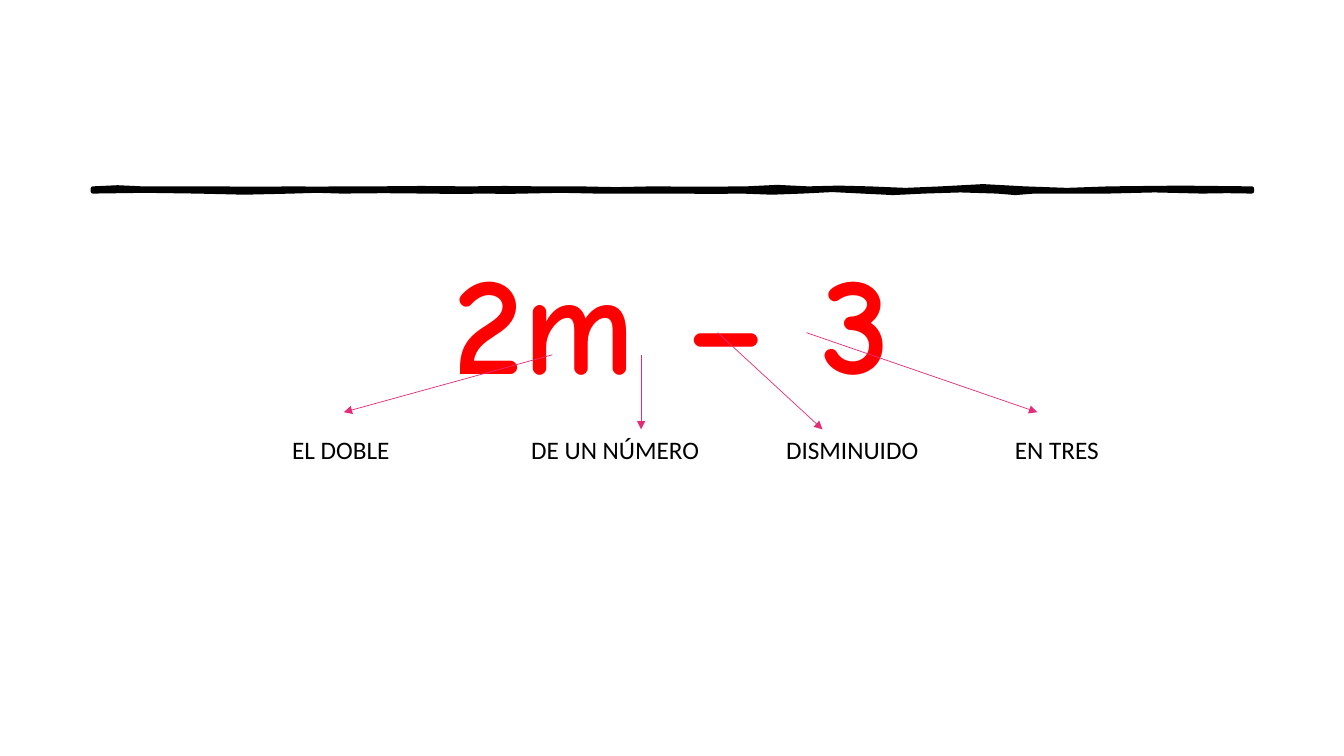
from lxml.etree import SubElement
from pptx import Presentation
from pptx.dml.color import RGBColor
from pptx.enum.shapes import MSO_CONNECTOR as Connector
from pptx.enum.text import MSO_AUTO_SIZE as AutoSize, PP_ALIGN as Align
from pptx.oxml.ns import qn
from pptx.util import Inches, Pt

BLACK = RGBColor(0x00, 0x00, 0x00)
RED = RGBColor(0xFF, 0x00, 0x00)
PINK = RGBColor(0xE3, 0x2D, 0x76)

RULE_LEFT, RULE_WIDTH = 6.9, 86.25
RULE_TOP, RULE_BOTTOM = 24.93, 25.33
SWAY = 0.05

TOP_WAVES = [
    (4.3, -3), (10.4, 0), (17.7, 1), (21, 1), (24.3, 0), (32.4, -1),
    (38.7, -1), (42, 0), (48.3, 2), (56.4, 1), (61.7, -4), (67, -2),
    (73.2, 4), (80.4, -6), (87.7, 4), (100, -2),
]
BOTTOM_WAVES = [
    (95.7, -1), (87.5, -3), (81.2, 0), (78, 4), (71.7, -3), (66.4, 4),
    (61.2, -4), (56, 3), (50.7, 1), (43.5, 0), (37.2, -2), (34, 1),
    (28.7, 1), (21.5, -1), (17.2, -2), (9, 3), (0, -2),
]
ARROWS = [
    (41.1, 46.93, 25.58, 54.53),
    (47.7, 46.93, 47.7, 56.8),
    (53.4, 44, 61.2, 56.8),
    (60, 44, 77.18, 54.53),
]
MEANINGS = [
    ("EL DOBLE", 21, 11.1),
    ("DE UN NÚMERO", 38.78, 17.18),
    ("DISMINUIDO", 57.75, 13.95),
    ("EN TRES", 74.78, 10.13),
]


def wavy_edge(waves, start, base):
    points = [(start, base)]
    for end, sway in waves:
        points += [((start + end) / 2, base + SWAY * sway), (end, base)]
        start = end
    return [(RULE_LEFT + RULE_WIDTH * along / 100, y) for along, y in points]


class ExpressionSlide:
    def __init__(self, deck):
        self.column = deck.slide_width / 100
        self.row = deck.slide_height / 100
        self.shapes = deck.slides.add_slide(deck.slide_layouts[6]).shapes

    def at(self, x, y):
        return round(x * self.column), round(y * self.row)

    def rule(self):
        edge = wavy_edge(TOP_WAVES, 0, RULE_TOP) + wavy_edge(BOTTOM_WAVES, 100, RULE_BOTTOM)
        start, *rest = [self.at(*point) for point in edge]
        builder = self.shapes.build_freeform(*start)
        builder.add_line_segments(rest, close=True)
        rule = builder.convert_to_shape()
        rule.shadow.inherit = False
        rule.fill.solid()
        rule.fill.fore_color.rgb = BLACK
        rule.line.color.rgb = BLACK
        rule.line.width = Pt(3)

    def text(self, words, x, y, width, height, font, size, color, bold=False):
        box = self.shapes.add_textbox(*self.at(x, y), *self.at(width, height))
        frame = box.text_frame
        frame.text = words
        frame.word_wrap = True
        paragraph = frame.paragraphs[0]
        style = paragraph.runs[0].font
        style.name, style.size, style.bold = font, Pt(size), bold
        style.color.rgb = color
        return frame, paragraph

    def expression(self, words):
        _, paragraph = self.text(words, RULE_LEFT, 28.13, RULE_WIDTH, 62,
                                 "Comic Neue", 100, RED, True)
        paragraph.alignment = Align.CENTER
        paragraph.line_spacing = 1.1
        paragraph.space_before = Pt(10)

    def meaning(self, words, x, width):
        frame, _ = self.text(words, x, 56.8, width, 5.33, "Calibri", 18, BLACK)
        frame.auto_size = AutoSize.SHAPE_TO_FIT_TEXT

    def arrow(self, x1, y1, x2, y2):
        arrow = self.shapes.add_connector(
            Connector.STRAIGHT, *self.at(x1, y1), *self.at(x2, y2))
        arrow.line.color.rgb = PINK
        arrow.line.width = Pt(0.5)
        properties = arrow._element.spPr
        SubElement(properties.find(qn("a:ln")), qn("a:tailEnd"), type="triangle")
        SubElement(properties, qn("a:effectLst"))


def main():
    deck = Presentation()
    deck.slide_width, deck.slide_height = Inches(13.33), Inches(7.5)
    slide = ExpressionSlide(deck)
    slide.rule()
    slide.expression("2m – 3")
    for arrow in ARROWS:
        slide.arrow(*arrow)
    for meaning in MEANINGS:
        slide.meaning(*meaning)
    deck.save("out.pptx")


if __name__ == "__main__":
    main()
